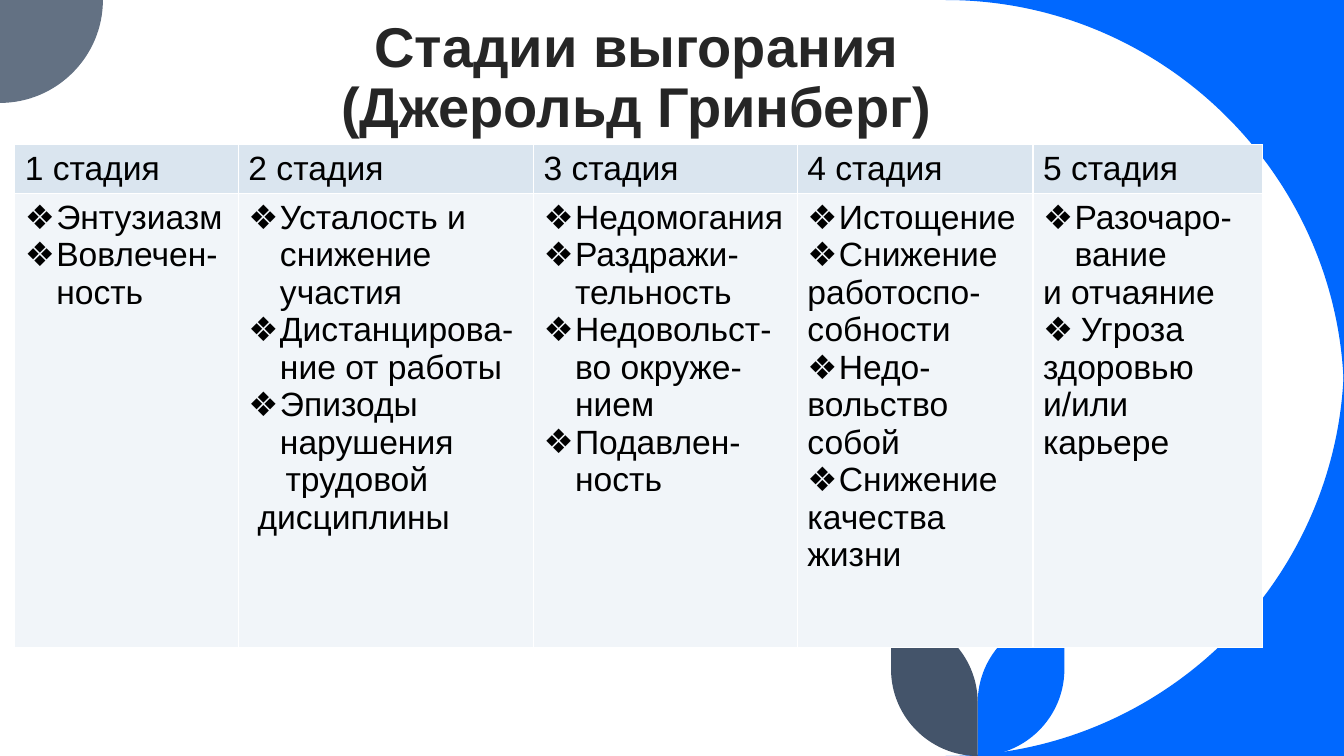
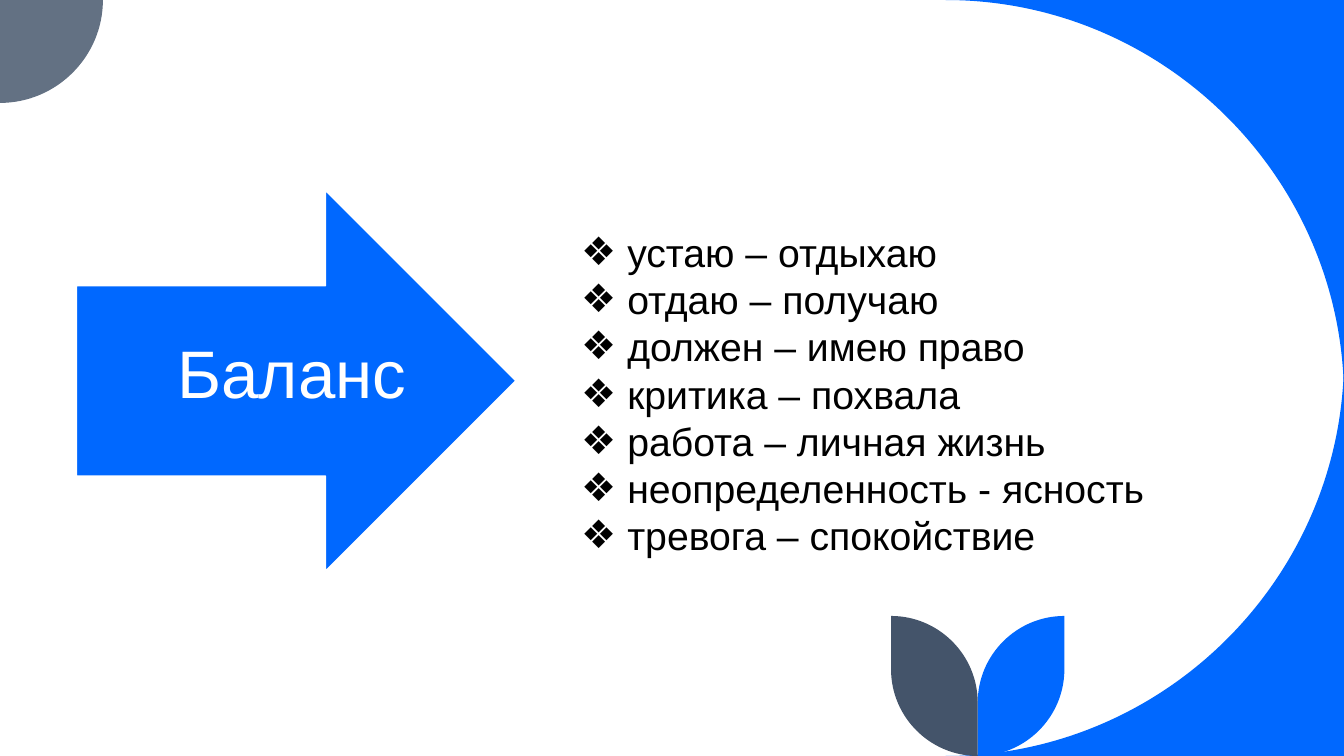
"""Builds two slides: a table of burnout stages and a list of balances."""
from lxml import etree
from pptx import Presentation
from pptx.dml.color import RGBColor
from pptx.enum.shapes import MSO_SHAPE
from pptx.enum.text import MSO_ANCHOR, PP_ALIGN
from pptx.oxml.ns import qn
from pptx.util import Pt

ARROW = MSO_SHAPE.RIGHT_ARROW
LEFT, CENTER = PP_ALIGN.LEFT, PP_ALIGN.CENTER
TOP, MIDDLE, BOTTOM = MSO_ANCHOR.TOP, MSO_ANCHOR.MIDDLE, MSO_ANCHOR.BOTTOM

COLORS = {
    "blue": "0068FF",
    "slate": "44546A",
    "grey": "637183",
    "title": "262626",
    "black": "000000",
    "white": "FFFFFF",
    "head": "DAE5EF",
    "body": "F1F5F9",
}
FONT = "Arial"
BULLET = "❖"
SLIDE_W, SLIDE_H = 960, 540
ROUNDNESS = 0.55


def rgb(name):
    """Return the named colour."""
    return RGBColor.from_string(COLORS[name])


def write(p, text, size=24, color="black", bold=False, align=LEFT,
          spacing=None, left=0, bullet=False):
    """Fill a paragraph with formatted text."""
    p.text = text
    p.alignment = align
    if spacing:
        p.line_spacing = Pt(spacing)
    for r in p.runs:
        r.font.name, r.font.size, r.font.bold = FONT, Pt(size), bold
        r.font.color.rgb = rgb(color)
    pPr = p._p.get_or_add_pPr()
    pPr.set("marL", str(Pt(left)))
    pPr.set("indent", str(Pt(-left if bullet else 0)))
    if bullet:
        etree.SubElement(pPr, qn("a:buFont")).set("typeface", FONT)
        etree.SubElement(pPr, qn("a:buChar")).set("char", BULLET)
    else:
        etree.SubElement(pPr, qn("a:buNone"))


def write_all(tf, items, **fmt):
    """Write one paragraph for each (text, format) pair."""
    for i, (text, own) in enumerate(items):
        p = tf.add_paragraph() if i else tf.paragraphs[0]
        write(p, text, **fmt, **own)


def point(text, left=22.5):
    """Describe a bulleted paragraph."""
    return text, {"left": left, "bullet": True}


def plain(text, left=0):
    """Describe a paragraph without a bullet."""
    return text, {"left": left}


def add_text(s, box, items, anchor=TOP, **fmt):
    """Add a text box holding the given paragraphs."""
    tf = s.shapes.add_textbox(*map(Pt, box)).text_frame
    tf.word_wrap = True
    tf.vertical_anchor = anchor
    write_all(tf, items, **fmt)


def line(x, y):
    """Describe a straight segment to a point."""
    return [(x, y)]


def quarter(start, corner, end):
    """Describe a quarter circle that bulges towards a corner."""
    controls = [tuple(a + ROUNDNESS * (c - a) for a, c in zip(tip, corner))
                for tip in (start, end)]
    return controls + [end]


def add_outline(s, start, segments, color):
    """Add a filled closed outline of lines and curves."""
    points = [(x * 100, y * 100) for seg in segments for x, y in seg]
    builder = s.shapes.build_freeform(start[0] * 100, start[1] * 100, Pt(1) / 100)
    builder.add_line_segments(points, close=True)
    sp = builder.convert_to_shape()
    steps = iter(list(sp._element.iter(qn("a:lnTo"))))
    for seg in segments:
        first, *rest = [next(steps) for _ in seg]
        if rest:
            first.addprevious(curve := etree.Element(qn("a:cubicBezTo")))
            for step in (first, *rest):
                curve.append(step[0])
                step.getparent().remove(step)
    sp.shadow.inherit = False
    sp.fill.solid()
    sp.fill.fore_color.rgb = rgb(color)
    sp.line.fill.background()


def add_leaf(s, tip, stem, color):
    """Add a leaf from its upper tip to its stem at the bottom."""
    (x0, y0), (x1, y1) = tip, stem
    radius = abs(x1 - x0)
    side, inner = (x0, y1 - radius), (x1, y0 + radius)
    segments = [line(*side), quarter(side, (x0, y1), stem),
                line(*inner), quarter(inner, (x1, y0), tip)]
    add_outline(s, tip, segments, color)


def add_leaves(s, box):
    """Add a pair of mirrored leaves that meet in the middle of the box."""
    x, y, w, h = box
    stem = (x + w / 2, y + h)
    add_leaf(s, (x + w, y), stem, "blue")
    add_leaf(s, (x, y), stem, "slate")


def add_backdrop(s):
    """Draw the shapes that all slides share."""
    radius, dot = 284.5, 73.5
    for edge, inward in ((0, radius), (SLIDE_H, SLIDE_H - radius)):
        corner = (SLIDE_W, edge)
        begin, end = (SLIDE_W - radius, edge), (SLIDE_W, inward)
        add_outline(s, corner, [line(*begin), quarter(begin, corner, end)], "blue")
    begin, end = (dot, 0), (0, dot)
    add_outline(s, (0, 0), [line(*begin), quarter(begin, (dot, dot), end)], "grey")
    add_leaves(s, (636.5, 440, 123.8, 100))


def add_title(s, box, text):
    """Add the slide title."""
    add_text(s, box, [plain(text)], anchor=BOTTOM, size=40, color="title",
             bold=True, align=CENTER, spacing=42.8)


def style_cell(cell, fill):
    """Give a cell white borders and a fill."""
    tcPr = cell._tc.get_or_add_tcPr()
    for side in ("lnL", "lnR", "lnT", "lnB"):
        ln = etree.SubElement(tcPr, qn(f"a:{side}"), w=str(Pt(1)))
        line_fill = etree.SubElement(ln, qn("a:solidFill"))
        etree.SubElement(line_fill, qn("a:srgbClr"), val=COLORS["white"])
    cell.fill.solid()
    cell.fill.fore_color.rgb = rgb(fill)


def add_stage_table(s, box, stages, widths, head_h):
    """Add a table with one column for each stage."""
    x, y, w, h = box
    table = s.shapes.add_table(2, len(stages), Pt(x), Pt(y), Pt(w), Pt(h)).table
    table.rows[0].height, table.rows[1].height = Pt(head_h), Pt(h - head_h)
    for col, (items, width) in enumerate(zip(stages, widths)):
        table.columns[col].width = Pt(width)
        head = [plain(f"{col + 1} стадия")]
        for row, (content, fill) in enumerate(((head, "head"), (items, "body"))):
            cell = table.cell(row, col)
            style_cell(cell, fill)
            write_all(cell.text_frame, content, spacing=26.75)


def add_arrow(s, box, label):
    """Add the labelled block arrow."""
    x, y, w, h = box
    sp = s.shapes.add_shape(ARROW, *map(Pt, box))
    sp.shadow.inherit = False
    sp.fill.solid()
    sp.fill.fore_color.rgb = rgb("blue")
    sp.line.color.rgb = rgb("white")
    sp.line.width = Pt(1)
    add_text(s, (x + 25.5, y + h / 4 - 1.5, w - 57, h / 2), [plain(label)],
             anchor=MIDDLE, size=48, color="white", align=CENTER, spacing=48)


def stages_slide(prs):
    """Build the slide with the table of stages."""
    s = prs.slides.add_slide(prs.slide_layouts[6])
    add_backdrop(s)
    add_title(s, (52.5, 13.5, 804, 89.3), "Стадии выгорания\v(Джерольд Гринберг)")
    stages = [
        [point("Энтузиазм"), point("Вовлечен-ность")],
        [point("Усталость и снижение участия"),
         point("Дистанцирова-ние от работы"),
         point("Эпизоды нарушения"),
         plain("трудовой", 26.5), plain("дисциплины", 6.5)],
        [point("Недомогания"), point("Раздражи-тельность"),
         point("Недовольст-во окруже-нием"), point("Подавлен-ность")],
        [point("Истощение"), point("Снижение"), plain("работоспо-собности"),
         point("Недо-"), plain("вольство собой"),
         point("Снижение"), plain("качества жизни")],
        [point("Разочаро-вание"), plain("и отчаяние"), point("Угроза", 27),
         plain("здоровью и/или"), plain("карьере")],
    ]
    widths = [159.8, 210.8, 188.5, 168.3, 164]
    add_stage_table(s, (10.5, 103.5, sum(widths), 359), stages, widths, 35)


def balance_slide(prs):
    """Build the slide with the arrow and the list of balances."""
    s = prs.slides.add_slide(prs.slide_layouts[6])
    add_backdrop(s)
    add_arrow(s, (54.5, 136, 314, 272), "Баланс")
    pairs = [
        "устаю – отдыхаю",
        "отдаю – получаю",
        "должен – имею право",
        "критика – похвала",
        "работа – личная жизнь",
        "неопределенность - ясность",
        "тревога – спокойствие",
    ]
    add_text(s, (408, 74, 447, 414), [point(pair, 33) for pair in pairs],
             anchor=MIDDLE, size=28, spacing=33.7)


def main():
    """Build and save the presentation."""
    prs = Presentation()
    prs.slide_width, prs.slide_height = Pt(SLIDE_W), Pt(SLIDE_H)
    stages_slide(prs)
    balance_slide(prs)
    prs.save("out.pptx")


if __name__ == "__main__":
    main()
